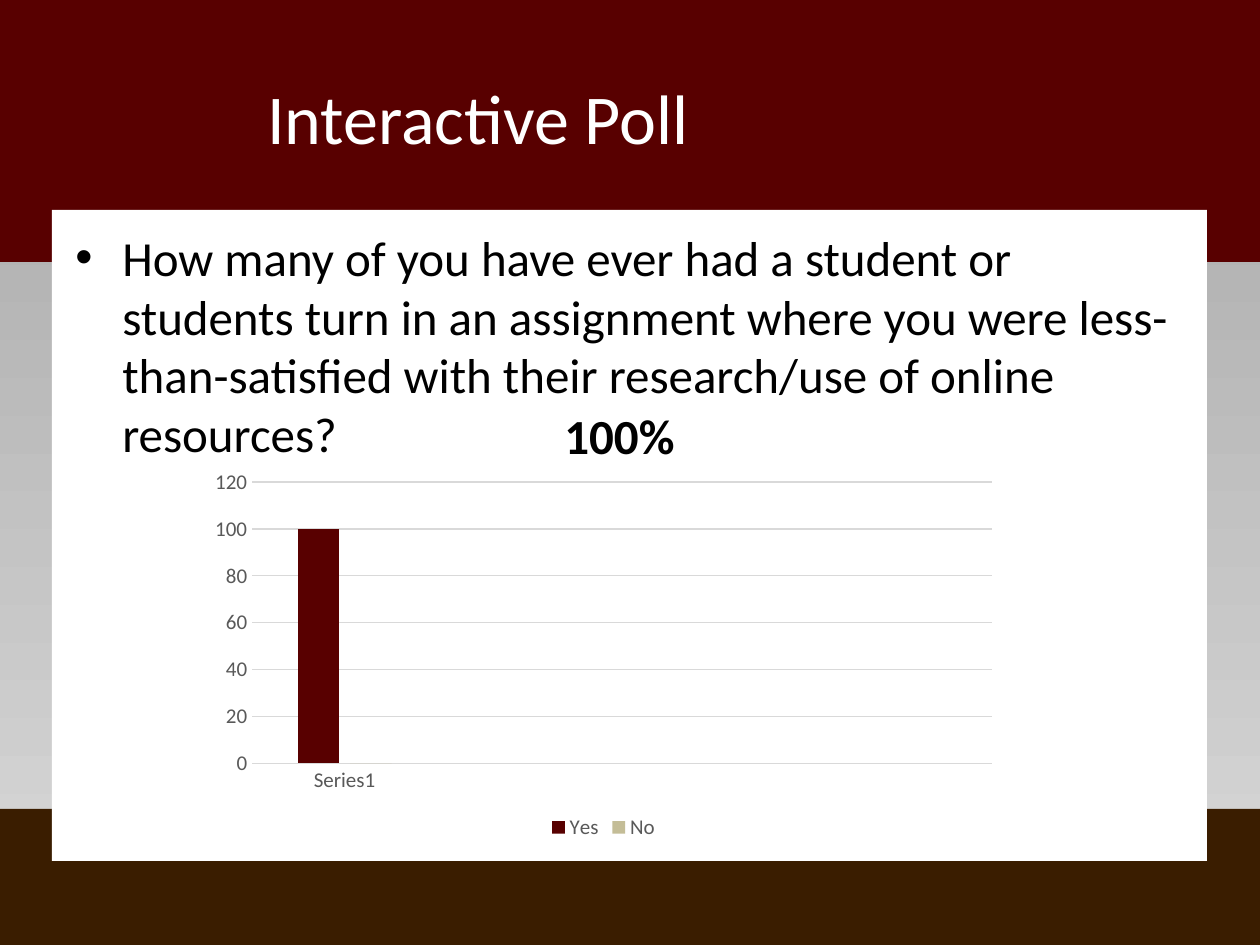
from lxml.etree import SubElement
from pptx import Presentation
from pptx.chart.data import CategoryChartData
from pptx.dml.color import RGBColor
from pptx.enum.chart import XL_CHART_TYPE as ChartType, XL_LEGEND_POSITION as LegendPosition
from pptx.enum.chart import XL_TICK_MARK as TickMark
from pptx.enum.shapes import MSO_SHAPE as Shape
from pptx.enum.text import MSO_ANCHOR as Anchor, PP_ALIGN as Align
from pptx.oxml.ns import qn
from pptx.util import Pt

EMU_PER_PX = 914400 / 126
COLORS = {
    "maroon": "580000", "brown": "3A1D00", "white": "FFFFFF", "black": "000000",
    "tan": "C4BD97", "label": "595959", "grid": "D9D9D9",
    "gray_top": "A6A6A6", "gray_bottom": "D9D9D9",
}


def px(*lengths):
    """Turn pixel lengths into a list of EMU."""
    return [round(length * EMU_PER_PX) for length in lengths]


def style_font(font, size, color, bold=False):
    font.name = "Calibri"
    font.size = Pt(size)
    font.bold = bold
    font.color.rgb = RGBColor.from_string(COLORS[color])


presentation = Presentation()
presentation.slide_width, presentation.slide_height = px(1260, 945)
slide = presentation.slides.add_slide(presentation.slide_layouts[5])

# Background
background = slide.background.fill
background.gradient()
background.gradient_angle = 270
for stop, color in zip(background.gradient_stops, ("gray_top", "gray_bottom")):
    stop.color.rgb = RGBColor.from_string(COLORS[color])

# Bands and content panel, behind the title
title = slide.shapes.title
panels = [
    ("brown", 0, 809, 1260, 136),
    ("maroon", 0, 0, 1260, 262),
    ("white", 52, 210, 1155, 651),
]
for color, *box in panels:
    panel = slide.shapes.add_shape(Shape.RECTANGLE, *px(*box))
    panel.shadow.inherit = False
    panel.fill.solid()
    panel.fill.fore_color.rgb = RGBColor.from_string(COLORS[color])
    panel.line.fill.background()
    title._element.addprevious(panel._element)

# Title
title.left, title.top, title.width, title.height = px(21, 37, 914, 158)
title.text_frame.text = "Interactive Poll"
title.text_frame.vertical_anchor = Anchor.MIDDLE
paragraph = title.text_frame.paragraphs[0]
paragraph.alignment = Align.CENTER
style_font(paragraph.runs[0].font, 40, "white")

# Question
question = slide.shapes.add_textbox(*px(63, 221, 1134, 624))
question.text_frame.word_wrap = True
question.text_frame.text = (
    "How many of you have ever had a student or students turn in an assignment "
    "where you were less-than-satisfied with their research/use of online resources?"
)
paragraph = question.text_frame.paragraphs[0]
properties = paragraph._p.get_or_add_pPr()
indent = px(47)[0]
properties.set("marL", str(indent))
properties.set("indent", str(-indent))
SubElement(properties, qn("a:buFont"), typeface="Arial")
SubElement(properties, qn("a:buChar"), char="•")
style_font(paragraph.runs[0].font, 28, "black")

# Poll chart
chart_data = CategoryChartData()
chart_data.categories = ["Series1", "", "", ""]
chart_data.add_series("Yes", [100, None, None, None])
chart_data.add_series("No", [0, None, None, None])
chart = slide.shapes.add_chart(
    ChartType.COLUMN_CLUSTERED, *px(199, 462, 809, 383), chart_data
).chart
chart.has_title = False
style_font(chart.font, 10, "black")

plot = chart.plots[0]
plot.vary_by_categories = False
plot.gap_width = 219
plot.overlap = -27
for series, color in zip(plot.series, ("maroon", "tan")):
    series.format.fill.solid()
    series.format.fill.fore_color.rgb = RGBColor.from_string(COLORS[color])

category_axis, value_axis = chart.category_axis, chart.value_axis
for axis in (category_axis, value_axis):
    axis.major_tick_mark = axis.minor_tick_mark = TickMark.NONE
    style_font(axis.tick_labels.font, 12, "label")
value_axis.minimum_scale, value_axis.maximum_scale = 0, 120
value_axis.major_unit = 20
value_axis.format.line.fill.background()
for line in (category_axis.format.line, value_axis.major_gridlines.format.line):
    line.color.rgb = RGBColor.from_string(COLORS["grid"])
    line.width = Pt(0.75)

chart.has_legend = True
chart.legend.position = LegendPosition.BOTTOM
chart.legend.include_in_layout = False
style_font(chart.legend.font, 12, "label")

# Result
result = slide.shapes.add_textbox(*px(552, 399, 158, 72))
result.text_frame.word_wrap = True
result.text_frame.text = "100%"
style_font(result.text_frame.paragraphs[0].runs[0].font, 28, "black", bold=True)

presentation.save("out.pptx")
